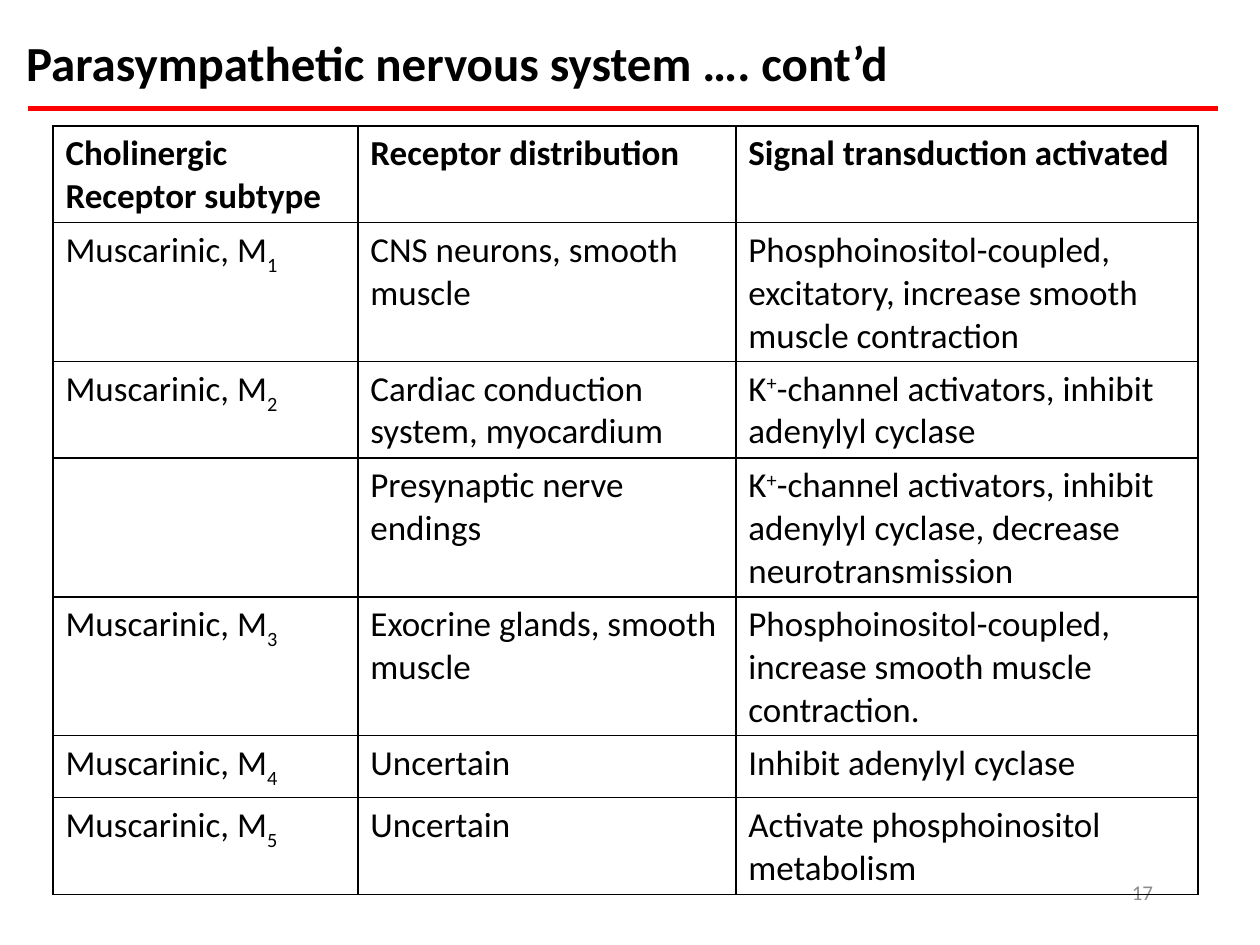
from pptx import Presentation
from pptx.dml.color import RGBColor as Rgb
from pptx.enum.shapes import MSO_CONNECTOR as Conn
from pptx.enum.text import MSO_ANCHOR as Anchor, PP_ALIGN as Align
from pptx.oxml.ns import qn
from pptx.util import Inches, Pt
from lxml.etree import SubElement as Sub

TITLE = "Parasympathetic nervous system …. cont’d"
PAGE = "17"
HEADS = ["Cholinergic Receptor subtype", "Receptor distribution", "Signal transduction activated"]
POTASH = ["K", ("+", 30)]
ROWS = [
    ("1", "CNS neurons, smooth muscle",
     ["Phosphoinositol-coupled, excitatory, increase smooth muscle contraction"]),
    ("2", "Cardiac conduction system, myocardium",
     POTASH + ["-channel activators, inhibit adenylyl cyclase"]),
    ("", "Presynaptic nerve endings",
     POTASH + ["-channel activators, inhibit adenylyl cyclase, decrease neurotransmission"]),
    ("3", "Exocrine glands, smooth muscle",
     ["Phosphoinositol-coupled, increase smooth muscle contraction."]),
    ("4", "Uncertain", ["Inhibit adenylyl cyclase"]),
    ("5", "Uncertain", ["Activate phosphoinositol metabolism"]),
]
COLS = [2.42, 3, 3.67]
LINES = [2, 3, 2, 3, 3, 1, 2]
THEME = {
    "font": "Calibri", "ink": "000000", "rule": "FF0000", "mute": "8C8C8C",
    "title": 28, "body": 20, "page": 12, "bar": 3, "edge": 1,
}


def write(para, parts, size, ink="ink", bold=False):
    for part in parts:
        text, base = part if isinstance(part, tuple) else (part, 0)
        run = para.add_run()
        run.text = text
        font = run.font
        font.name = THEME["font"]
        font.size = Pt(THEME[size])
        font.bold = bold
        font.color.rgb = Rgb.from_string(THEME[ink])
        if base:
            font._element.set("baseline", str(base * 1000))


def label(slide, box, text, size, ink="ink", bold=False, align=Align.LEFT):
    frame = slide.shapes.add_textbox(*map(Inches, box)).text_frame
    frame.word_wrap = True
    frame.vertical_anchor = Anchor.MIDDLE
    para = frame.paragraphs[0]
    para.alignment = align
    write(para, [text], size, ink, bold)


def border(cell):
    props = cell._tc.get_or_add_tcPr()
    for side in ("lnL", "lnR", "lnT", "lnB"):
        line = Sub(props, qn(f"a:{side}"), w=str(Pt(THEME["edge"])))
        fill = Sub(line, qn("a:solidFill"))
        Sub(fill, qn("a:srgbClr"), val=THEME["ink"])


def grid(slide):
    cells = [[[head] for head in HEADS]]
    for kind, site, signal in ROWS:
        name = ["Muscarinic, M", (kind, -30)] if kind else []
        cells.append([name, [site], signal])
    highs = [0.1 + 0.29 * count for count in LINES]
    box = map(Inches, (0.42, 1, sum(COLS), sum(highs)))
    table = slide.shapes.add_table(len(cells), len(COLS), *box).table
    table.first_row = table.horz_banding = False
    for col, wide in zip(table.columns, COLS):
        col.width = Inches(wide)
    for i, (row, high) in enumerate(zip(table.rows, highs)):
        row.height = Inches(high)
        for cell, parts in zip(row.cells, cells[i]):
            border(cell)
            cell.fill.background()
            write(cell.text_frame.paragraphs[0], parts, "body", bold=i == 0)


def main():
    deck = Presentation()
    deck.slide_width, deck.slide_height = Inches(10), Inches(7.5)
    slide = deck.slides.add_slide(deck.slide_layouts[6])
    label(slide, (7.17, 6.83, 2.08, 0.5), PAGE, "page", "mute", align=Align.RIGHT)
    label(slide, (0.11, 0.25, 8.5, 0.49), TITLE, "title", bold=True)
    bar = slide.shapes.add_connector(Conn.STRAIGHT, *map(Inches, (0.22, 0.86, 9.67, 0.86)))
    bar.line.color.rgb = Rgb.from_string(THEME["rule"])
    bar.line.width = Pt(THEME["bar"])
    Sub(bar._element.spPr, qn("a:effectLst"))
    grid(slide)
    deck.save("out.pptx")


if __name__ == "__main__":
    main()
